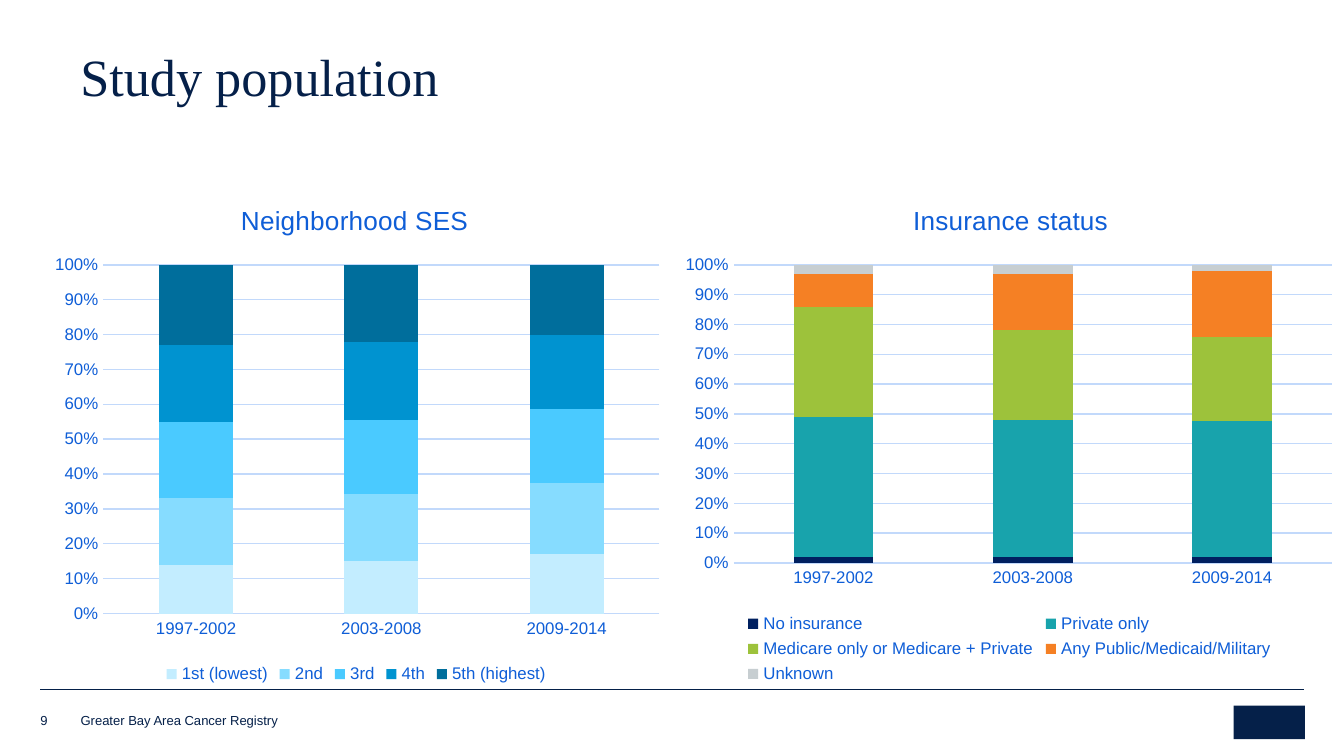
from dataclasses import dataclass

from lxml import etree
from pptx import Presentation
from pptx import util as u
from pptx.chart import data as chart_data
from pptx.dml.color import RGBColor
from pptx.enum import chart as charts, shapes, text
from pptx.oxml import parse_xml
from pptx.oxml.ns import nsdecls, qn

Inches, Pt = u.Inches, u.Pt


@dataclass(frozen=True)
class Theme:
    navy: str = "052049"
    blue: str = "0F5ED7"
    grid: str = "C2D9FB"
    sans: str = "Arial"
    serif: str = "Times New Roman"
    heading: float = 28
    chart_title: float = 14
    chart_base: float = 10
    chart_label: float = 9
    footer: float = 7


THEME = Theme()
PERIODS = ["1997-2002", "2003-2008", "2009-2014"]
SES = [
    ("1st (lowest)", (14, 15, 17), "C3EDFF"),
    ("2nd", (19, 19, 20), "86DCFF"),
    ("3rd", (22, 21, 21), "4ACAFF"),
    ("4th", (22, 22, 21), "0093D0"),
    ("5th (highest)", (23, 22, 20), "006E9C"),
]
INSURANCE = [
    ("No insurance", (2, 2, 2), "002060"),
    ("Private only", (47, 46, 45), "18A3AC"),
    ("Medicare only or Medicare + Private", (37, 30, 28), "9DC23B"),
    ("Any Public/Medicaid/Military", (11, 19, 22), "F58024"),
    ("Unknown", (3, 3, 2), "C7CED1"),
]


def rgb(value):
    return RGBColor.from_string(value)


def style_font(font, size, color, name=THEME.sans):
    font.size, font.name, font.bold = Pt(size), name, False
    font.color.rgb = rgb(color)


def add_text(page, words, left, top, width, height, size, color=THEME.navy,
             name=THEME.sans, anchor=text.MSO_ANCHOR.TOP, inset=None, spacing=None):
    box = page.shapes.add_textbox(*map(Inches, (left, top, width, height)))
    frame = box.text_frame
    frame.word_wrap, frame.vertical_anchor = True, anchor
    if inset is not None:
        frame.margin_left = frame.margin_right = Inches(inset)
        frame.margin_top = frame.margin_bottom = Inches(inset)
    para = frame.paragraphs[0]
    if spacing:
        para.line_spacing = spacing
    span = para.add_run()
    span.text = words
    style_font(span.font, size, color, name)


def place_part(part, after, **fractions):
    """Set a manual layout, in fractions of the chart, on a chart part."""
    for old in part.findall(qn("c:layout")):
        part.remove(old)
    layout = parse_xml(f"<c:layout {nsdecls('c')}><c:manualLayout/></c:layout>")
    manual = layout[0]
    if after is None:
        etree.SubElement(manual, qn("c:layoutTarget")).set("val", "inner")
    for key in ("xMode", "yMode"):
        etree.SubElement(manual, qn(f"c:{key}")).set("val", "edge")
    for key, value in fractions.items():
        etree.SubElement(manual, qn(f"c:{key}")).set("val", str(value))
    if after is None:
        part.insert(0, layout)
    else:
        part.find(qn(after)).addnext(layout)


def add_stacked_chart(page, title, series, left, top, width, height,
                      title_at, plot_at, legend_at):
    data = chart_data.CategoryChartData()
    data.categories = PERIODS
    for name, values, _ in series:
        data.add_series(name, values)
    chart = page.shapes.add_chart(
        charts.XL_CHART_TYPE.COLUMN_STACKED_100,
        *map(Inches, (left, top, width, height)), data).chart
    style_font(chart.font, THEME.chart_base, THEME.navy)

    # Title and legend
    chart.has_title = True
    heading = chart.chart_title
    heading.include_in_layout = False
    span = heading.text_frame.paragraphs[0].add_run()
    span.text = title
    style_font(span.font, THEME.chart_title, THEME.blue)
    chart.has_legend = True
    legend = chart.legend
    legend.position = charts.XL_LEGEND_POSITION.BOTTOM
    legend.include_in_layout = False
    style_font(legend.font, THEME.chart_label, THEME.blue)

    # Axes
    for axis in (chart.category_axis, chart.value_axis):
        axis.major_tick_mark = axis.minor_tick_mark = charts.XL_TICK_MARK.NONE
        style_font(axis.tick_labels.font, THEME.chart_label, THEME.blue)
    values = chart.value_axis
    values.tick_labels.number_format = "0%"
    values.tick_labels.number_format_is_linked = False
    values.has_major_gridlines = True
    values.format.line.fill.background()
    for line in (values.major_gridlines.format.line, chart.category_axis.format.line):
        line.color.rgb, line.width = rgb(THEME.grid), Pt(0.75)

    # Columns
    plot = chart.plots[0]
    plot.gap_width, plot.overlap, plot.vary_by_categories = 150, 100, False
    for column, (_, _, color) in zip(plot.series, series):
        column.format.fill.solid()
        column.format.fill.fore_color.rgb = rgb(color)

    root = chart.element
    place_part(root.xpath(".//c:chart/c:title")[0], "c:tx", **title_at)
    place_part(root.xpath(".//c:plotArea")[0], None, **plot_at)
    place_part(root.xpath(".//c:legend")[0], "c:legendPos", **legend_at)


def add_footer(page, left, top, width):
    # Rule
    rule = page.shapes.add_connector(
        shapes.MSO_CONNECTOR.STRAIGHT, Inches(left), Inches(top),
        Inches(left + width), Inches(top))
    rule.line.color.rgb, rule.line.width = rgb(THEME.navy), Pt(0.25)
    etree.SubElement(rule.element.spPr, qn("a:effectLst"))

    # Plain block in the emblem's place
    emblem = page.shapes.add_shape(
        shapes.MSO_SHAPE.RECTANGLE, Inches(left + width - 0.52),
        Inches(top + 0.12), Inches(0.53), Inches(0.25))
    emblem.shadow.inherit = False
    emblem.fill.solid()
    emblem.fill.fore_color.rgb = rgb(THEME.navy)
    emblem.line.fill.background()

    # Source and page number
    style = dict(size=THEME.footer, anchor=text.MSO_ANCHOR.BOTTOM, inset=0)
    add_text(page, "Greater Bay Area Cancer Registry",
             left + 0.3, top + 0.18, 4.71, 0.11, **style)
    add_text(page, "9", left, top + 0.16, 0.27, 0.13, **style)


def main():
    deck = Presentation()
    # Widescreen, 16:9
    deck.slide_width = Inches(10)
    deck.slide_height = deck.slide_width * 9 // 16
    page = deck.slides.add_slide(deck.slide_layouts[6])

    add_footer(page, 0.3, 5.13, 9.4)
    add_text(page, "Study population", 0.5, 0.35, 8.94, 0.5,
             size=THEME.heading, name=THEME.serif, spacing=0.85)
    add_stacked_chart(
        page, "Neighborhood SES", SES, 0.3, 1.37, 4.7, 3.76,
        title_at=dict(x=0.31, y=0.03),
        plot_at=dict(x=0.1, y=0.16, w=0.88, h=0.69),
        legend_at=dict(x=0.19, y=0.94, w=0.62, h=0.06))
    add_stacked_chart(
        page, "Insurance status", INSURANCE, 5.01, 1.37, 5, 3.76,
        title_at=dict(x=0.35, y=0.03),
        plot_at=dict(x=0.09, y=0.16, w=0.89, h=0.59),
        legend_at=dict(x=0.1, y=0.84, w=0.8, h=0.16))
    deck.save("out.pptx")


if __name__ == "__main__":
    main()
